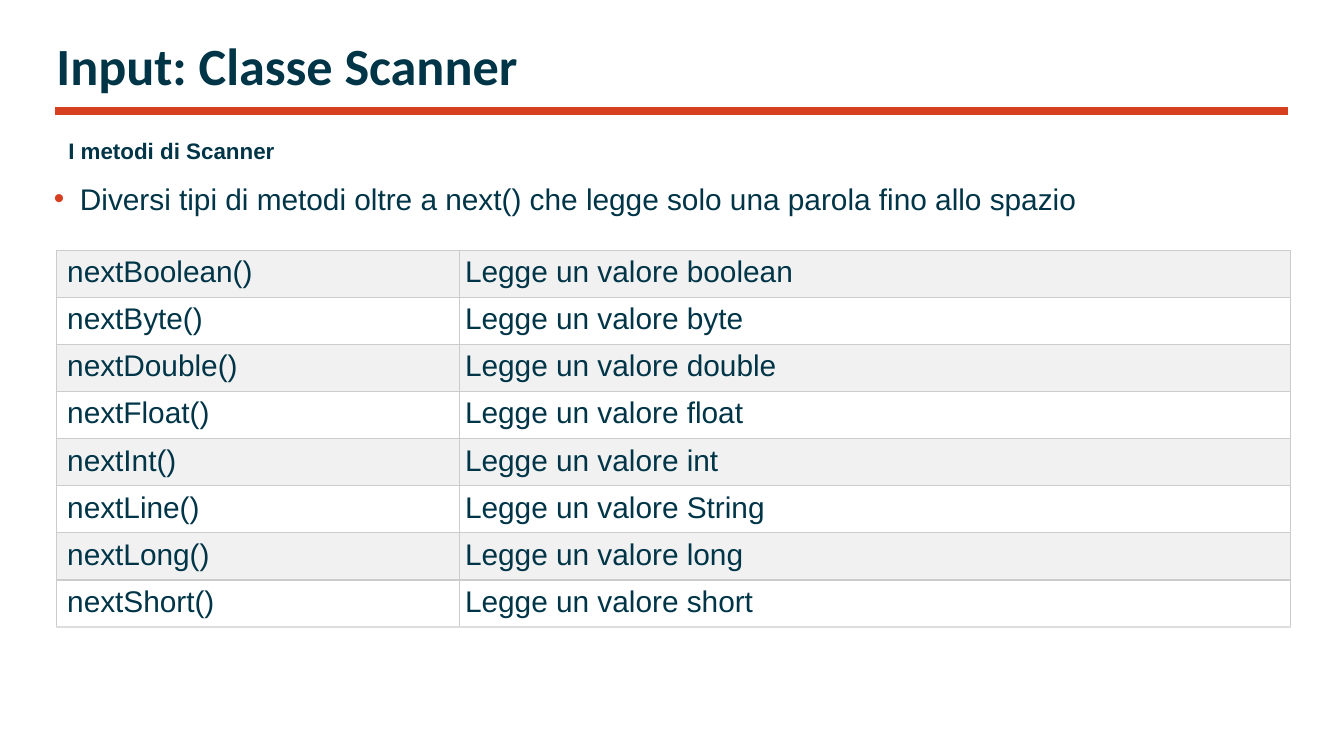
import pptx
import pptx.util
import pptx.dml.color
import pptx.enum.shapes
import pptx.enum.text
import pptx.oxml
import lxml.etree

INK, RED, GRAY, WHITE = "003548", "D63F20", "F1F1F1", "FFFFFF"
NS = pptx.oxml.ns.nsdecls("a")

# Widescreen slide, 16 to 9
deck = pptx.Presentation()
deck.slide_width = pptx.util.Inches(10)
deck.slide_height = deck.slide_width * 9 // 16
slide = deck.slides.add_slide(deck.slide_layouts[6])
shapes = slide.shapes

# Grid: 100 columns across the slide, with square cells
unit = deck.slide_width // 100


def tint(code):
    return pptx.dml.color.RGBColor.from_string(code)


def write(frame, text, size, face="Arial", bold=False):
    frame.text = text
    font = frame.paragraphs[0].runs[0].font
    font.size = pptx.util.Pt(size)
    font.name = face
    font.bold = bold
    font.color.rgb = tint(INK)


# Red rule under the title
rule = shapes.add_connector(
    pptx.enum.shapes.MSO_CONNECTOR.STRAIGHT,
    *[int(n * unit) for n in (4.1, 8.25, 95.85, 8.25)])
rule.line.color.rgb = tint(RED)
rule.line.width = pptx.util.Pt(4.5)
lxml.etree.SubElement(rule._element.spPr, pptx.oxml.ns.qn("a:effectLst"))

# Title, bullet line and subtitle
boxes = []
for area in ((4.2, 2.5, 91.7, 4.3), (4, 13.7, 93.5, 36.7), (4.1, 9.7, 83.4, 3)):
    box = shapes.add_textbox(*[int(n * unit) for n in area])
    box.text_frame.word_wrap = True
    boxes.append(box.text_frame)
title, body, sub = boxes
for frame in (title, body):
    frame.margin_left = frame.margin_right = 0
    frame.margin_top = frame.margin_bottom = 0

write(title, "Input: Classe Scanner", 28, "Calibri", True)
write(sub, "I metodi di Scanner", 12, bold=True)
sub.vertical_anchor = pptx.enum.text.MSO_ANCHOR.MIDDLE
write(body, "Diversi tipi di metodi oltre a next() che legge solo una parola fino allo spazio", 16)

# Red bullet with a hanging indent
line = body.paragraphs[0]
line.line_spacing = pptx.util.Pt(17.2)
props = line._p.get_or_add_pPr()
props.set("marL", str(int(1.95 * unit)))
props.set("indent", str(int(-1.95 * unit)))
for part in (f'<a:buClr {NS}><a:srgbClr val="{RED}"/></a:buClr>',
             f'<a:buFont {NS} typeface="Arial"/>',
             f'<a:buChar {NS} char="•"/>'):
    props.append(pptx.oxml.parse_xml(part))

# Table of methods, with the hard spaces of the text
rows = [
    ("nextBoolean()", "Legge un valore boolean"),
    ("nextByte()", "Legge un valore byte"),
    ("nextDouble()", "Legge un valore double"),
    ("nextFloat()", "Legge un valore float"),
    ("nextInt()", "Legge un valore int"),
    ("nextLine()", "Legge un valore String "),
    ("nextLong()", "Legge un valore long"),
    ("nextShort()", "Legge un valore short "),
]
tall = 3.5
grid = shapes.add_table(
    len(rows), 2,
    *[int(n * unit) for n in (4.2, 18.65, 91.8, tall * len(rows))]).table
for col, wide in zip(grid.columns, (30, 61.8)):
    col.width = int(wide * unit)

for r, row in enumerate(rows):
    grid.rows[r].height = int(tall * unit)
    for c, text in enumerate(row):
        cell = grid.cell(r, c)
        write(cell.text_frame, text, 16)
        cell.margin_left = int((0.4 if c else 0.8) * unit)
        cell.margin_right = cell.margin_top = cell.margin_bottom = int(0.4 * unit)
        # Borders come before the fill in the cell's properties
        for side in "LRTB":
            edge = "DDDDDD" if side == "B" and r == len(rows) - 1 else "CCCCCC"
            cell._tc.get_or_add_tcPr().append(pptx.oxml.parse_xml(
                f'<a:ln{side} {NS} w="{pptx.util.Pt(0.75)}"><a:solidFill>'
                f'<a:srgbClr val="{edge}"/></a:solidFill></a:ln{side}>'))
        cell.fill.solid()
        cell.fill.fore_color.rgb = tint(WHITE if r % 2 else GRAY)

deck.save("out.pptx")
